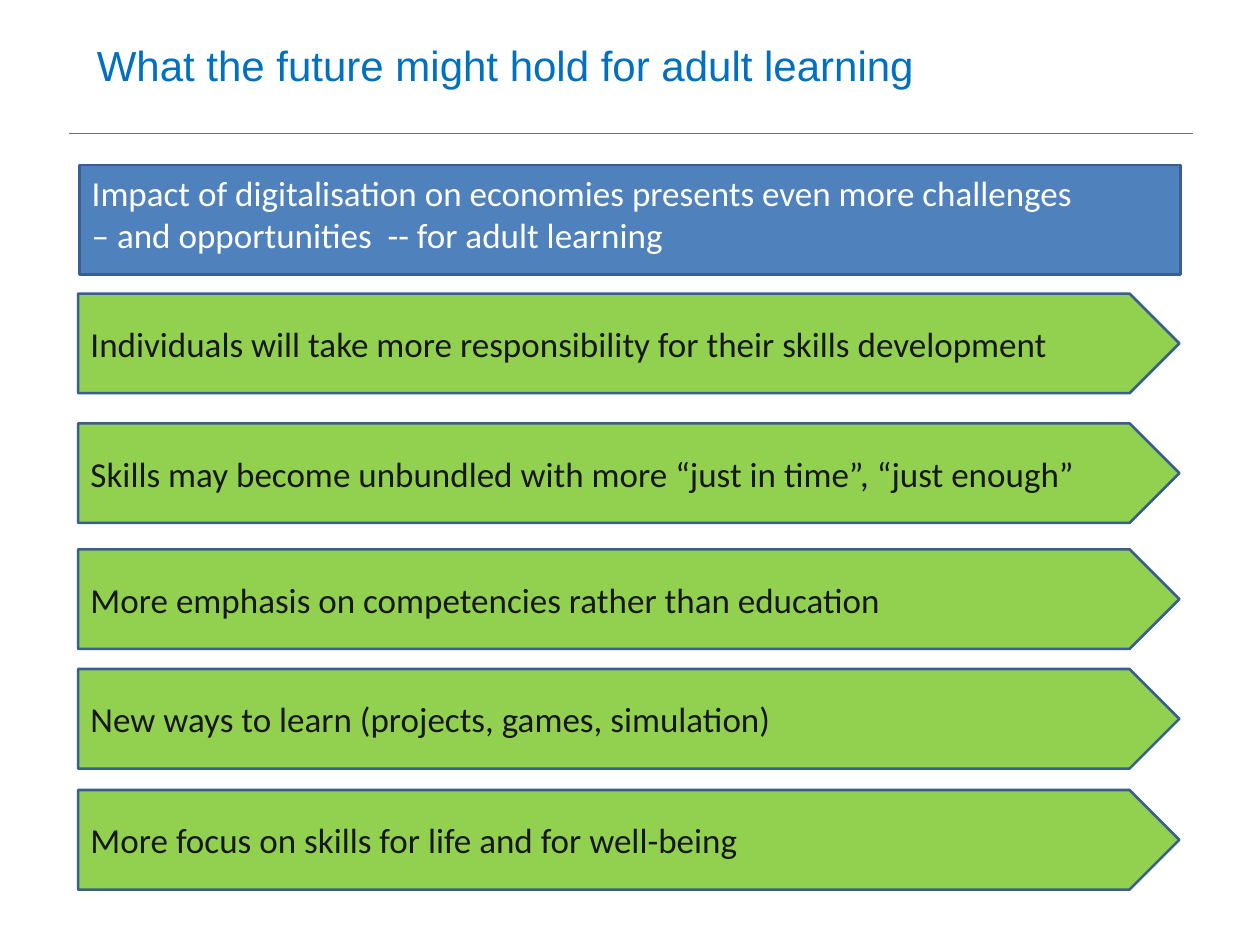
import pptx
import pptx.util
import pptx.dml.color
import pptx.enum.shapes
import pptx.enum.text
import pptx.oxml.ns
import lxml.etree

Inches = pptx.util.Inches
Pt = pptx.util.Pt
SHAPES = pptx.enum.shapes.MSO_SHAPE
ANCHOR = pptx.enum.text.MSO_ANCHOR

# Content
TITLE = "What the future might hold for adult learning"
BANNER = ("Impact of digitalisation on economies presents even more challenges"
          "\v– and opportunities  -- for adult learning")
TRENDS = [  # top edge, wording
    (2.33, "Individuals will take more responsibility for their skills development"),
    (3.36, "Skills may become unbundled with more “just in time”, “just enough”"),
    (4.36, "More emphasis on competencies rather than education"),
    (5.31, "New ways to learn (projects, games, simulation)"),
    (6.27, "More focus on skills for life and for well-being"),
]
BAR_WIDTH = 8.74


def color(value):
    return pptx.dml.color.RGBColor.from_string(value)


def write(box, text, font, size, ink, anchor):
    frame = box.text_frame
    frame.word_wrap = True
    frame.vertical_anchor = anchor
    frame.text = text
    paragraph = frame.paragraphs[0]
    paragraph.alignment = pptx.enum.text.PP_ALIGN.LEFT
    for span in paragraph.runs:
        span.font.name = font
        span.font.size = Pt(size)
        span.font.color.rgb = color(ink)


def add_bar(page, preset, left, top, height, fill, text, ink, anchor):
    bar = page.shapes.add_shape(preset, Inches(left), Inches(top),
                                Inches(BAR_WIDTH), Inches(height))
    bar.shadow.inherit = False
    bar.fill.solid()
    bar.fill.fore_color.rgb = color(fill)
    bar.line.color.rgb = color("3A5F8C")
    bar.line.width = Pt(1.5)
    write(bar, text, "Calibri", 20, ink, anchor)


deck = pptx.Presentation()
deck.slide_width, deck.slide_height = Inches(10), Inches(7.5)
page = deck.slides.add_slide(deck.slide_layouts[6])

# Title and the rule below it
rule = page.shapes.add_connector(pptx.enum.shapes.MSO_CONNECTOR.STRAIGHT,
                                 Inches(0.55), Inches(1.06), Inches(9.47), Inches(1.06))
rule.line.color.rgb = color("727272")
rule.line.width = Pt(0.5)
lxml.etree.SubElement(rule._element.spPr, pptx.oxml.ns.qn("a:effectLst"))

title = page.shapes.add_textbox(Inches(0.67), Inches(0.02), Inches(8.82), Inches(0.99))
write(title, TITLE, "Arial", 24, "0070C0", ANCHOR.MIDDLE)

# Banner, then one arrow per trend
add_bar(page, SHAPES.RECTANGLE, 0.63, 1.31, 0.87, "4F81BD", BANNER, "FFFFFF", ANCHOR.TOP)
for top, wording in TRENDS:
    add_bar(page, SHAPES.PENTAGON, 0.62, top, 0.79, "92D050", wording, "171717", ANCHOR.MIDDLE)

deck.save("out.pptx")
